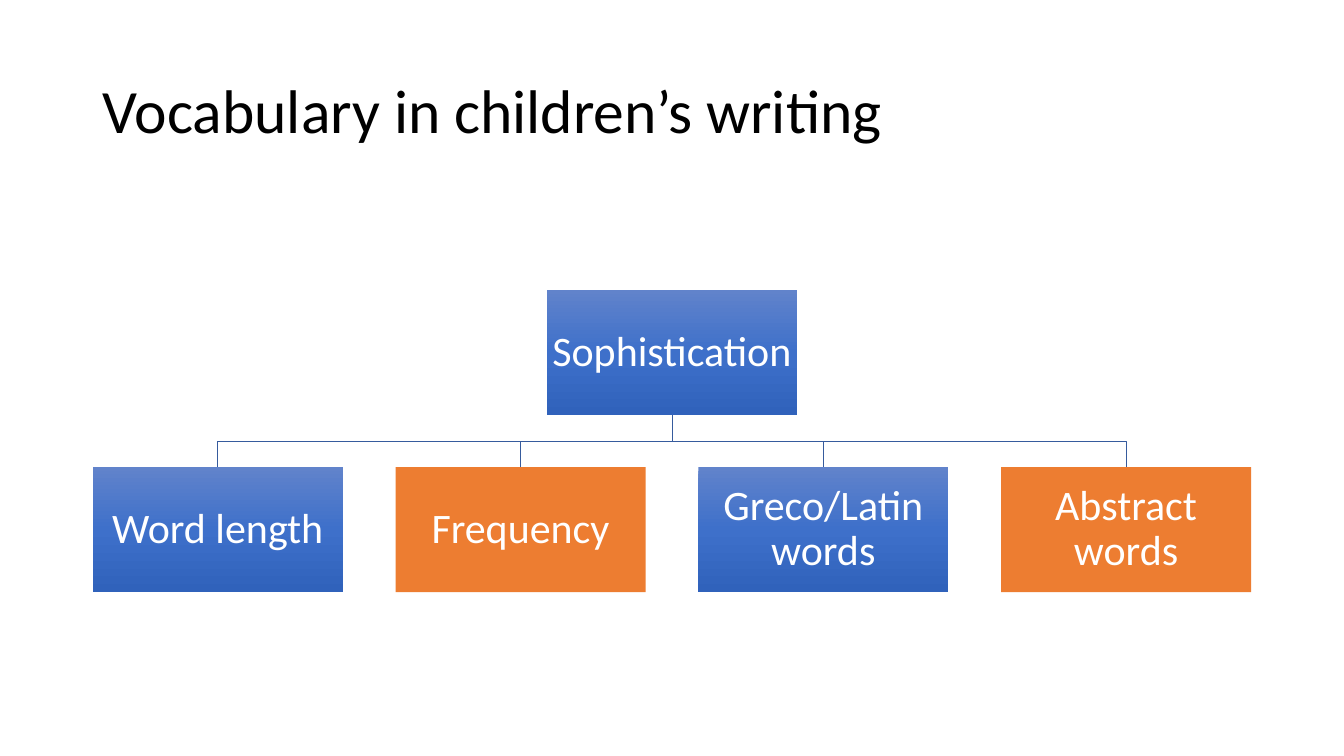
import copy

import pptx
import pptx.dml.color
import pptx.enum.shapes
import pptx.enum.text
import pptx.oxml.ns
import pptx.util

Cm = pptx.util.Cm
Pt = pptx.util.Pt
Align = pptx.enum.text.PP_ALIGN

COLORS = {
    "ink": "000000",
    "white": "FFFFFF",
    "line": "365B9D",
    "light": "6183CB",
    "blue": "3E70CA",
    "deep": "3062BB",
    "orange": "ED7D31",
}
FADE = [(0, "light"), (0.5, "blue"), (1, "deep")]

# Box grid, in centimetres
LEFT, PITCH = 2.34, 7.63
WIDE, HIGH = 6.3, 3.15
ROOT_TOP, LEAF_TOP = 7.31, 11.77
LEAVES = [
    ("Word length", None),
    ("Frequency", "orange"),
    ("Greco/Latin words", None),
    ("Abstract words", "orange"),
]


def rgb(name):
    return pptx.dml.color.RGBColor.from_string(COLORS[name])


class Chart:
    """Draws the parts of a tree chart on one slide."""

    font = "Calibri"

    def __init__(self, slide):
        self.shapes = slide.shapes

    def label(self, shape, text, size, color, align):
        frame = shape.text_frame
        frame.word_wrap = True
        frame.vertical_anchor = pptx.enum.text.MSO_ANCHOR.MIDDLE
        frame.text = text
        para = frame.paragraphs[0]
        para.alignment = align
        para.line_spacing = 0.9
        font = para.runs[0].font
        font.name = self.font
        font.size = Pt(size)
        font.color.rgb = rgb(color)

    def title(self, text):
        box = self.shapes.add_textbox(Cm(2.33), Cm(1.01), Cm(29.21), Cm(3.68))
        self.label(box, text, 44, "ink", Align.LEFT)

    def fade(self, shape):
        """Fill from light at the top to deep at the bottom."""
        fill = shape.fill
        fill.gradient()
        fill.gradient_angle = 270
        first = next(shape.element.iter(pptx.oxml.ns.qn("a:gs")))
        first.addnext(copy.deepcopy(first))
        for stop, (place, name) in zip(fill.gradient_stops, FADE):
            stop.position = place
            stop.color.rgb = rgb(name)

    def box(self, text, left, top, color=None):
        """Draw a labelled box, shaded blue unless a plain color is given."""
        rect = self.shapes.add_shape(
            pptx.enum.shapes.MSO_SHAPE.RECTANGLE,
            Cm(left), Cm(top), Cm(WIDE), Cm(HIGH))
        rect.shadow.inherit = False
        rect.line.fill.background()
        if color:
            rect.fill.solid()
            rect.fill.fore_color.rgb = rgb(color)
        else:
            self.fade(rect)
        frame = rect.text_frame
        frame.margin_left = frame.margin_right = Cm(0.05)
        frame.margin_top = frame.margin_bottom = Cm(0.05)
        self.label(rect, text, 30, "white", Align.CENTER)

    def link(self, start, end):
        """Draw a bent line that turns halfway down."""
        (x1, y1), (x2, y2) = start, end
        half = (y1 + y2) / 2
        pen = self.shapes.build_freeform(Cm(x1), Cm(y1))
        turns = [(x1, half), (x2, half), end]
        pen.add_line_segments([(Cm(x), Cm(y)) for x, y in turns], close=False)
        bend = pen.convert_to_shape()
        bend.shadow.inherit = False
        bend.fill.background()
        bend.line.color.rgb = rgb("line")
        bend.line.width = Pt(0.5)


def main():
    deck = pptx.Presentation()
    deck.slide_width = Cm(33.87)
    deck.slide_height = Cm(19.05)
    chart = Chart(deck.slides.add_slide(deck.slide_layouts[6]))
    chart.title("Vocabulary in children’s writing")

    root = LEFT + PITCH * (len(LEAVES) - 1) / 2
    lefts = [LEFT + PITCH * i for i in range(len(LEAVES))]
    for left in lefts:
        chart.link((root + WIDE / 2, ROOT_TOP + HIGH),
                   (left + WIDE / 2, LEAF_TOP))
    chart.box("Sophistication", root, ROOT_TOP)
    for left, (text, color) in zip(lefts, LEAVES):
        chart.box(text, left, LEAF_TOP, color)

    deck.save("out.pptx")


if __name__ == "__main__":
    main()
